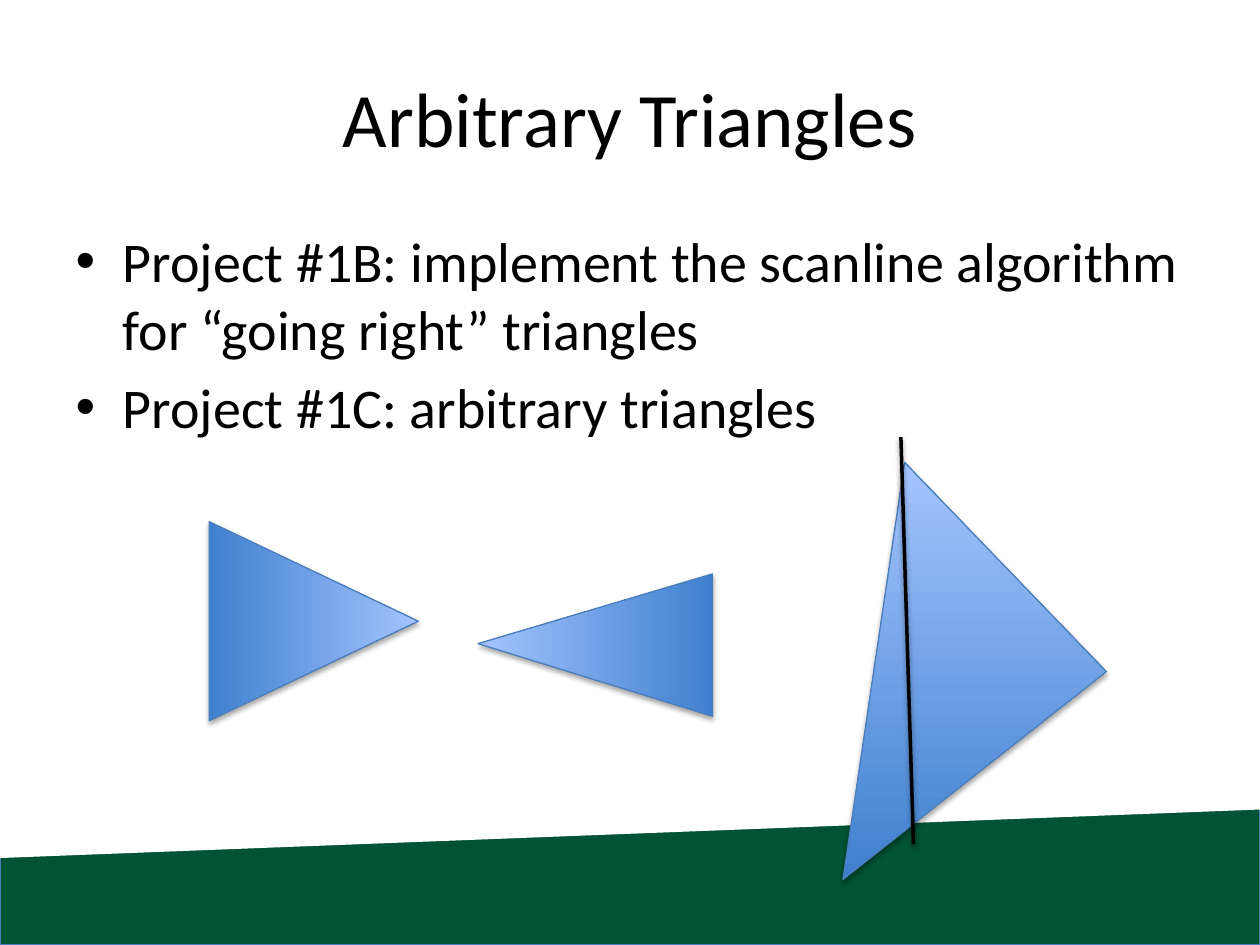
from lxml.etree import SubElement
from pptx import Presentation
from pptx.dml.color import RGBColor
from pptx.enum.shapes import MSO_CONNECTOR, MSO_SHAPE as Preset
from pptx.enum.text import MSO_ANCHOR, PP_ALIGN
from pptx.oxml.ns import qn
from pptx.util import Inches, Pt

BLACK = RGBColor(0x00, 0x00, 0x00)
WHITE = RGBColor(0xFF, 0xFF, 0xFF)
GREEN = RGBColor(0x00, 0x53, 0x34)
DEEP_BLUE = RGBColor(0x3F, 0x80, 0xCE)
PALE_BLUE = RGBColor(0xA4, 0xC4, 0xFF)
EDGE_BLUE = RGBColor(0x4B, 0x7E, 0xBC)
FONT = "Calibri"
BULLETS = [
    "Project #1B: implement the scanline algorithm for “going right” triangles",
    "Project #1C: arbitrary triangles",
]


def place(part, box):
    part.left, part.top, part.width, part.height = (Inches(v) for v in box)


def cast_shadow(effects, opacity, distance):
    shadow = SubElement(effects, qn("a:outerShdw"), blurRad=str(Pt(3.1)),
                        dist=str(Pt(distance)), dir="5400000", rotWithShape="0")
    color = SubElement(shadow, qn("a:srgbClr"), val=str(BLACK))
    SubElement(color, qn("a:alpha"), val=str(opacity * 1000))


def outline_with_shadow(shape):
    shape.line.color.rgb = EDGE_BLUE
    shape.line.width = Pt(0.75)
    shape.shadow.inherit = False
    cast_shadow(shape.element.spPr.find(qn("a:effectLst")), 35, 1.8)


def flip(shape, axis):
    shape.element.spPr.find(qn("a:xfrm")).set(axis, "1")


def style_text(paragraph, size):
    paragraph.font.name = FONT
    paragraph.font.size = Pt(size)
    paragraph.font.color.rgb = BLACK


def write_title(title, box):
    place(title, box)
    title.text_frame.text = "Arbitrary Triangles"
    title.text_frame.vertical_anchor = MSO_ANCHOR.MIDDLE
    heading = title.text_frame.paragraphs[0]
    heading.alignment = PP_ALIGN.CENTER
    style_text(heading, 44)


def write_bullets(body, box):
    place(body, box)
    body.text_frame.text = "\n".join(BULLETS)
    for paragraph in body.text_frame.paragraphs:
        style_text(paragraph, 32)


def draw_footer(slide, box):
    left, top, width, height = box
    band = slide.shapes.add_shape(Preset.RECTANGLE, *(Inches(v) for v in box))
    band.fill.solid()
    band.fill.fore_color.rgb = GREEN
    outline_with_shadow(band)

    depth, bottom = 2.32, top + 1.2
    mask = slide.shapes.add_shape(
        Preset.PARALLELOGRAM, Inches(left + (width - depth) / 2),
        Inches(bottom - (depth + width) / 2), Inches(depth), Inches(width))
    mask.adjustments[0] = 0.166
    mask.rotation = 90
    flip(mask, "flipH")
    mask.fill.solid()
    mask.fill.fore_color.rgb = WHITE
    mask.line.fill.background()
    mask.shadow.inherit = False

    for shape in (band, mask):
        slide.shapes.title.element.addprevious(shape.element)


def paint_triangle(triangle):
    triangle.fill.gradient()
    triangle.fill.gradient_angle = 90
    for stop, color in zip(triangle.fill.gradient_stops, (DEEP_BLUE, PALE_BLUE)):
        stop.color.rgb = color
    outline_with_shadow(triangle)


def draw_sideways_triangle(slide, box, apex=0.5, points_left=False):
    triangle = slide.shapes.add_shape(Preset.ISOSCELES_TRIANGLE,
                                      *(Inches(v) for v in box))
    triangle.adjustments[0] = apex
    triangle.rotation = 90
    if points_left:
        flip(triangle, "flipV")
    paint_triangle(triangle)


def draw_split_triangle(slide, box):
    left, top, width, height = box
    corners = [(left + 0.49, top), (left + width, top + 1.66), (left, top + height)]
    start, *others = [(Inches(x), Inches(y)) for x, y in corners]
    builder = slide.shapes.build_freeform(*start, scale=1.0)
    builder.add_line_segments(others, close=True)
    paint_triangle(builder.convert_to_shape())

    divider = slide.shapes.add_connector(
        MSO_CONNECTOR.STRAIGHT, Inches(left + 0.56), Inches(top + 3.03),
        Inches(left + 0.46), Inches(top - 0.2))
    divider.line.color.rgb = BLACK
    divider.line.width = Pt(2)
    effects = SubElement(divider.element.spPr, qn("a:effectLst"))
    cast_shadow(effects, 38, 1.6)


def main():
    deck = Presentation()
    deck.slide_width, deck.slide_height = Inches(10), Inches(7.5)
    slide = deck.slides.add_slide(deck.slide_layouts[1])
    draw_footer(slide, (0, 5.61, 10, 1.89))
    write_title(slide.shapes.title, (0.5, 0.3, 9, 1.25))
    write_bullets(slide.placeholders[1], (0.5, 1.75, 9, 4.95))
    draw_sideways_triangle(slide, (1.7, 4.1, 1.58, 1.66))
    draw_sideways_triangle(slide, (4.16, 4.19, 1.13, 1.86), 0.49, points_left=True)
    draw_split_triangle(slide, (6.69, 3.67, 2.09, 3.31))
    deck.save("out.pptx")


if __name__ == "__main__":
    main()
